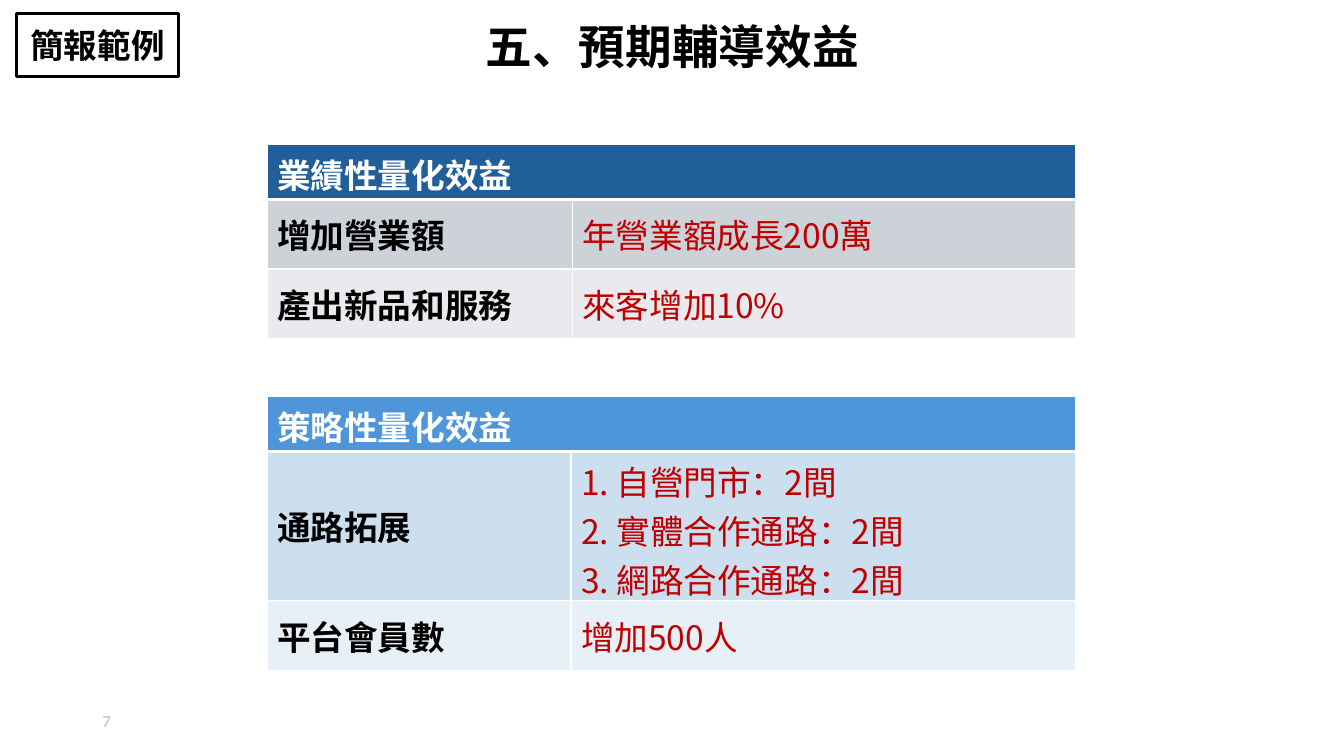
import pptx
import pptx.dml.color
import pptx.enum.shapes
import pptx.enum.text
import pptx.oxml
import pptx.oxml.ns
import pptx.util
from lxml import etree

Cm, Pt = pptx.util.Cm, pptx.util.Pt
ALIGN, ANCHOR = pptx.enum.text.PP_ALIGN, pptx.enum.text.MSO_ANCHOR
COLORS = {
    "black": "000000", "white": "FFFFFF", "value": "C00000", "number": "CDB6A5",
    "navy": "215F9A", "gray": "CCD2D8", "pale_gray": "E8EAED",
    "blue": "4E95D9", "sky": "CCDFEF", "pale_sky": "E7F0F7",
}
FONT = "Noto Sans CJK SC"


def rgb(name):
    """Return the named colour."""
    return pptx.dml.color.RGBColor.from_string(COLORS[name])


class SlideBuilder:
    """Holds the text style and the current slide."""

    def __init__(self, page, font, size):
        """Keep the page and its main font."""
        self.page, self.font, self.size = page, font, size

    def set_text(self, frame, text, color="black", bold=True, size=None, align=None):
        """Fill a text frame and format its runs."""
        frame.text = text
        for para in frame.paragraphs:
            para.alignment = align
            for span in para.runs:
                span.font.size = Pt(size or self.size)
                span.font.bold = bold
                span.font.name = self.font
                span.font.color.rgb = rgb(color)
                latin = span.font._element.find(pptx.oxml.ns.qn("a:latin"))
                east = etree.Element(pptx.oxml.ns.qn("a:ea"), typeface=self.font)
                latin.addnext(east)

    def title(self, text, left, top, width, height):
        """Place and format the title."""
        box = self.page.shapes.title
        box.left, box.top, box.width, box.height = map(Cm, (left, top, width, height))
        frame = box.text_frame
        self.set_text(frame, text, size=33.3, align=ALIGN.CENTER)
        frame.auto_size = pptx.enum.text.MSO_AUTO_SIZE.NONE
        frame.vertical_anchor = ANCHOR.MIDDLE
        frame.paragraphs[0].line_spacing = 0.9

    def label(self, text, left, top, width, height):
        """Draw an outlined label."""
        box = self.page.shapes.add_shape(
            pptx.enum.shapes.MSO_SHAPE.RECTANGLE, *map(Cm, (left, top, width, height)))
        box.shadow.inherit = False
        box.fill.background()
        box.line.color.rgb = rgb("black")
        box.line.width = Pt(2.25)
        box.text_frame.vertical_anchor = ANCHOR.MIDDLE
        self.set_text(box.text_frame, text, align=ALIGN.CENTER)

    def page_number(self, number, left, top, width, height):
        """Add the page number as a text box."""
        box = self.page.shapes.add_textbox(*map(Cm, (left, top, width, height)))
        frame = box.text_frame
        frame.word_wrap = True
        frame.vertical_anchor = ANCHOR.MIDDLE
        frame.text = number
        font = frame.paragraphs[0].runs[0].font
        font.name, font.size = "Calibri", Pt(12)
        font.color.rgb = rgb("number")

    def border(self, cell, **widths):
        """Give the named sides of a cell a white line."""
        for index, (side, width) in enumerate(widths.items()):
            line = pptx.oxml.parse_xml(
                f'<a:ln{side} {pptx.oxml.ns.nsdecls("a")} w="{Pt(width)}"><a:solidFill>'
                f'<a:srgbClr val="{COLORS["white"]}"/></a:solidFill></a:ln{side}>')
            cell._tc.get_or_add_tcPr().insert(index, line)

    def benefits(self, heading, rows, fills, top, columns, heights):
        """Add a table with one merged heading and label-value rows."""
        frame = self.page.shapes.add_table(
            len(heights), len(columns), Cm(6.73), Cm(top), Cm(sum(columns)), Cm(sum(heights)))
        table = frame.table
        table.first_row = table.horz_banding = False
        for column, width in zip(table.columns, columns):
            column.width = Cm(width)
        for row, height in zip(table.rows, heights):
            row.height = Cm(height)
        table.cell(0, 0).merge(table.cell(0, 1))
        self.set_text(table.cell(0, 0).text_frame, heading, "white")
        for index, fill in enumerate(fills):
            for column in range(len(columns)):
                cell = table.cell(index, column)
                cell.fill.solid()
                cell.fill.fore_color.rgb = rgb(fill)
                if index == 0:
                    self.border(cell, B=3)
                    continue
                cell.vertical_anchor = ANCHOR.MIDDLE
                self.set_text(cell.text_frame, rows[index - 1][column],
                              "value" if column else "black", bold=not column)
                sides = {"L" if column else "R": 1, "T": 3 if index == 1 else 1}
                if index < len(rows):
                    sides["B"] = 1
                self.border(cell, **sides)


def main():
    """Build the expected benefits slide."""
    deck = pptx.Presentation()
    deck.slide_width, deck.slide_height = Cm(33.87), Cm(19.05)
    page = deck.slides.add_slide(deck.slide_layouts[5])
    builder = SlideBuilder(page, FONT, 24)
    builder.page_number("7", 2.33, 17.66, 7.62, 1.01)
    builder.benefits(
        "業績性量化效益",
        [("增加營業額", "年營業額成長200萬"), ("產出新品和服務", "來客增加10%")],
        ("navy", "gray", "pale_gray"), 3.63, (7.69, 12.68), (1.4, 1.75, 1.75))
    channels = "1. 自營門市：2間\n2. 實體合作通路：2間\n3. 網路合作通路：2間"
    builder.benefits(
        "策略性量化效益",
        [("通路拓展", channels), ("平台會員數", "增加500人")],
        ("blue", "sky", "pale_sky"), 9.98, (7.66, 12.71), (1.4, 3.76, 1.75))
    builder.label("簡報範例", 0.42, 0.34, 4.08, 1.6)
    builder.title("五、預期輔導效益", 4.2, 0.43, 25.48, 1.63)
    deck.save("out.pptx")


if __name__ == "__main__":
    main()
